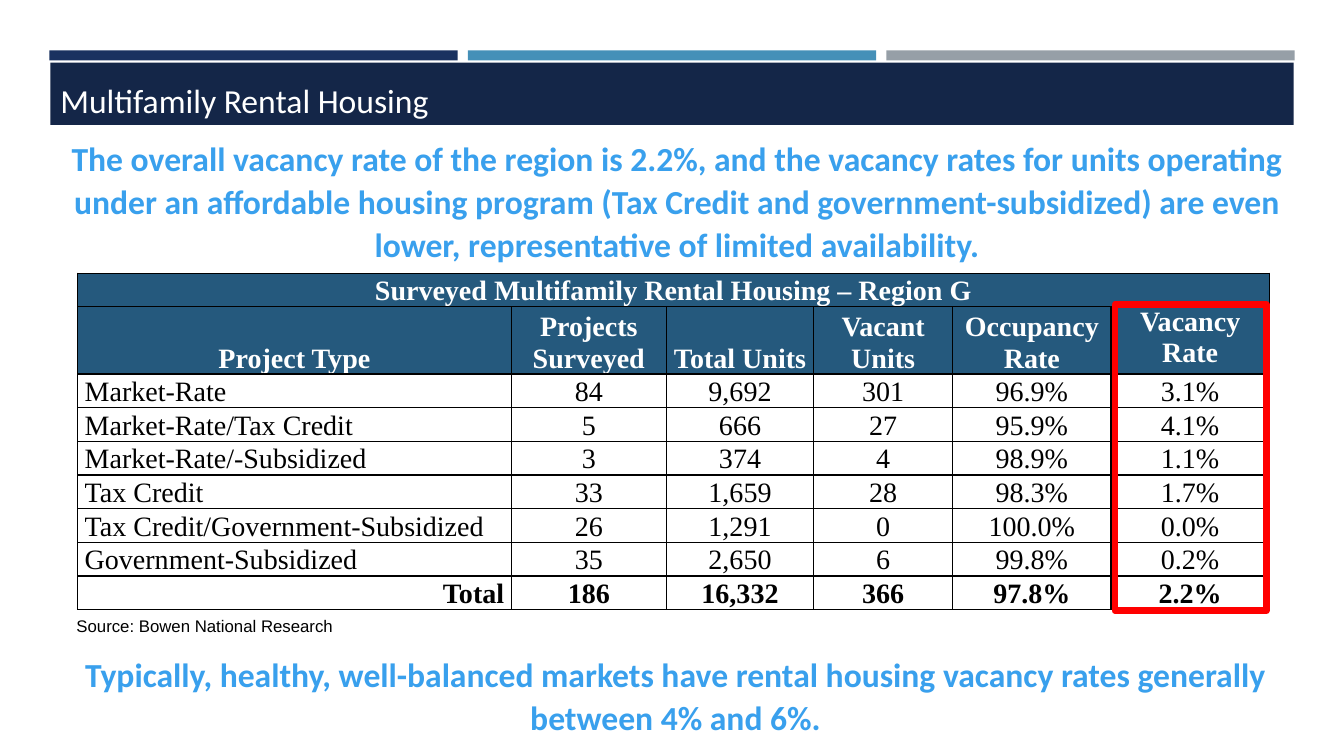
from lxml.etree import SubElement
from pptx import Presentation
from pptx.dml.color import RGBColor
from pptx.enum.shapes import MSO_SHAPE
from pptx.enum.text import MSO_ANCHOR, PP_ALIGN
from pptx.oxml.ns import qn
from pptx.util import Inches, Pt

NAVY = RGBColor(0x1A, 0x32, 0x60)
DARK_NAVY = RGBColor(0x14, 0x26, 0x48)
STEEL_BLUE = RGBColor(0x45, 0x90, 0xB8)
GRAY = RGBColor(0x96, 0x9F, 0xA7)
SKY_BLUE = RGBColor(0x39, 0xA0, 0xED)
TABLE_BLUE = RGBColor(0x25, 0x59, 0x7D)
RED = RGBColor(0xFF, 0x00, 0x00)
WHITE = RGBColor(0xFF, 0xFF, 0xFF)
BLACK = RGBColor(0x00, 0x00, 0x00)

COLUMN_WIDTHS = [4.3, 1.54, 1.46, 1.38, 1.57, 1.57]
TABLE_HEIGHT = 3.33
TABLE_ROWS = [
    ["Surveyed Multifamily Rental Housing – Region G", "", "", "", "", ""],
    ["Project Type", "Projects Surveyed", "Total Units", "Vacant Units",
     "Occupancy Rate", "Vacancy Rate"],
    ["Market-Rate", "84", "9,692", "301", "96.9%", "3.1%"],
    ["Market-Rate/Tax Credit", "5", "666", "27", "95.9%", "4.1%"],
    ["Market-Rate/-Subsidized", "3", "374", "4", "98.9%", "1.1%"],
    ["Tax Credit", "33", "1,659", "28", "98.3%", "1.7%"],
    ["Tax Credit/Government-Subsidized", "26", "1,291", "0", "100.0%", "0.0%"],
    ["Government-Subsidized", "35", "2,650", "6", "99.8%", "0.2%"],
    ["Total", "186", "16,332", "366", "97.8%", "2.2%"],
]


class SlideBuilder:
    """Draws the elements of one slide in a shared style."""

    def __init__(self, slide):
        self.slide = slide
        self.heading_font = "Calibri"
        self.table_font = "Times New Roman"
        self.source_font = "Arial"

    def add_text(self, paragraph, text, font_name, size, color, bold=False,
                 alignment=PP_ALIGN.LEFT):
        paragraph.alignment = alignment
        run = paragraph.add_run()
        run.text = text
        run.font.name = font_name
        run.font.size = Pt(size)
        run.font.bold = bold
        run.font.color.rgb = color

    def rectangle(self, left, top, width, height, fill=None, outline=None):
        shape = self.slide.shapes.add_shape(
            MSO_SHAPE.RECTANGLE, Inches(left), Inches(top),
            Inches(width), Inches(height))
        shape.shadow.inherit = False
        if fill is None:
            shape.fill.background()
        else:
            shape.fill.solid()
            shape.fill.fore_color.rgb = fill
        if outline is None:
            shape.line.fill.background()
        else:
            shape.line.color.rgb = outline
            shape.line.width = Pt(4.75)
        return shape

    def title(self, text):
        shape = self.rectangle(0.5, 0.62, 12.33, 0.62, DARK_NAVY)
        shape.text_frame.vertical_anchor = MSO_ANCHOR.BOTTOM
        paragraph = shape.text_frame.paragraphs[0]
        paragraph.line_spacing = 0.85
        self.add_text(paragraph, text, self.heading_font, 24, WHITE)

    def text_box(self, left, top, width, height):
        box = self.slide.shapes.add_textbox(
            Inches(left), Inches(top), Inches(width), Inches(height))
        return box.text_frame

    def statement(self, left, top, width, height, text):
        frame = self.text_box(left, top, width, height)
        frame.word_wrap = True
        paragraph = frame.paragraphs[0]
        paragraph.line_spacing = 1.07
        properties = paragraph._p.get_or_add_pPr()
        properties.set("marL", str(Inches(0.06)))
        properties.set("indent", "0")
        self.add_text(paragraph, text, self.heading_font, 24, SKY_BLUE, True,
                      PP_ALIGN.CENTER)

    def source(self, text):
        frame = self.text_box(0.66, 6.06, 2.76, 0.3)
        frame.word_wrap = False
        frame.vertical_anchor = MSO_ANCHOR.MIDDLE
        self.add_text(frame.paragraphs[0], text, self.source_font, 12, BLACK,
                      alignment=PP_ALIGN.JUSTIFY)

    def borders(self, cell):
        properties = cell._tc.get_or_add_tcPr()
        for side in ("a:lnL", "a:lnR", "a:lnT", "a:lnB"):
            line = SubElement(properties, qn(side), w=str(Pt(1)))
            fill = SubElement(line, qn("a:solidFill"))
            SubElement(fill, qn("a:srgbClr"), val=str(BLACK))

    def cell(self, cell, text, header, bold, alignment, anchor):
        self.borders(cell)
        cell.margin_left = cell.margin_right = Inches(0.07)
        cell.margin_top = cell.margin_bottom = 0
        cell.vertical_anchor = anchor
        if header:
            cell.fill.solid()
            cell.fill.fore_color.rgb = TABLE_BLUE
        else:
            cell.fill.background()
        if text:
            self.add_text(cell.text_frame.paragraphs[0], text, self.table_font,
                          20, WHITE if header else BLACK, bold, alignment)

    def table(self, left, top, rows):
        table = self.slide.shapes.add_table(
            len(rows), len(COLUMN_WIDTHS), Inches(left), Inches(top),
            Inches(sum(COLUMN_WIDTHS)), Inches(TABLE_HEIGHT)).table
        table.first_row = table.horz_banding = False
        for column, width in zip(table.columns, COLUMN_WIDTHS):
            column.width = Inches(width)
        line_height = TABLE_HEIGHT / (len(rows) + 1)
        last_row, last_column = len(rows) - 1, len(COLUMN_WIDTHS) - 1
        for row_index, values in enumerate(rows):
            header = row_index < 2
            total = row_index == last_row
            table.rows[row_index].height = Inches(
                line_height * (2 if row_index == 1 else 1))
            for column_index, text in enumerate(values):
                alignment = PP_ALIGN.CENTER
                if column_index == 0 and not header:
                    alignment = PP_ALIGN.RIGHT if total else PP_ALIGN.LEFT
                top_aligned = (row_index, column_index) == (1, last_column)
                anchor = MSO_ANCHOR.TOP if top_aligned else MSO_ANCHOR.BOTTOM
                self.cell(table.cell(row_index, column_index), text, header,
                          header or total, alignment, anchor)
        table.cell(0, 0).merge(table.cell(0, last_column))


def main():
    presentation = Presentation()
    presentation.slide_width = Inches(13.33)
    presentation.slide_height = Inches(7.5)
    slide = presentation.slides.add_slide(presentation.slide_layouts[6])
    builder = SlideBuilder(slide)

    for index, color in enumerate([NAVY, STEEL_BLUE, GRAY]):
        builder.rectangle(0.49 + index * 4.15, 0.5, 4.05, 0.1, color)
    builder.title("Multifamily Rental Housing")
    builder.statement(
        0.52, 1.29, 12.33, 1.37,
        "The overall vacancy rate of the region is 2.2%, and the vacancy rates "
        "for units operating under an affordable housing program (Tax Credit "
        "and government-subsidized) are even lower, representative of limited "
        "availability.")
    builder.statement(
        0.49, 6.41, 12.36, 0.94,
        "Typically, healthy, well-balanced markets have rental housing vacancy "
        "rates generally between 4% and 6%.")
    builder.table(0.77, 2.71, TABLE_ROWS)
    builder.source("Source: Bowen National Research")
    builder.rectangle(11.06, 3.02, 1.5, 3.04, outline=RED)

    presentation.save("out.pptx")


if __name__ == "__main__":
    main()
